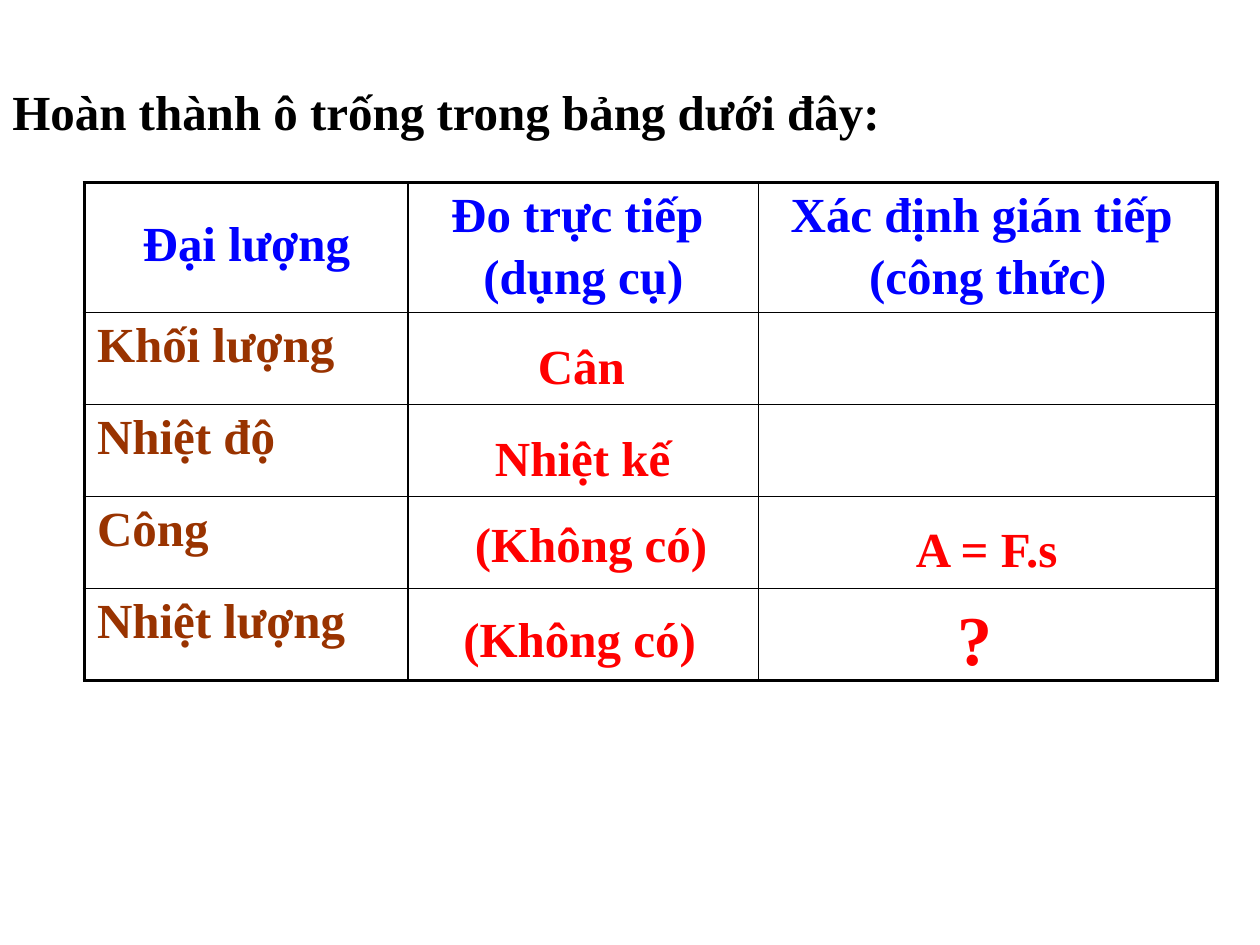
from lxml import etree
from pptx import Presentation
from pptx.dml.color import RGBColor
from pptx.enum import text as txt
from pptx.oxml.ns import qn
from pptx.util import Inches, Pt


def write(frame, words, size=28, color="FF0000", align=txt.PP_ALIGN.LEFT, gap=4.5):
    frame.word_wrap = True
    for i, line in enumerate(words.split("\n")):
        para = frame.paragraphs[0] if i == 0 else frame.add_paragraph()
        para.alignment = align
        if i:
            para.space_before = Pt(gap)
        run = para.add_run()
        run.text = line
        run.font.name = "Times New Roman"
        run.font.size = Pt(size)
        run.font.bold = True
        run.font.color.rgb = RGBColor.from_string(color)


def edge(cell, side, width):
    line = etree.SubElement(cell._tc.get_or_add_tcPr(), qn("a:" + side), w=str(Pt(width)))
    fill = etree.SubElement(line, qn("a:solidFill"))
    etree.SubElement(fill, qn("a:srgbClr"), val="000000")


prs = Presentation()
prs.slide_width, prs.slide_height = Inches(10), Inches(7.5)
slide = prs.slides.add_slide(prs.slide_layouts[6])

heads = ["Đại lượng", "Đo trực tiếp \n(dụng cụ)", "Xác định gián tiếp \n(công thức)"]
names = ["Khối lượng", "Nhiệt độ", "Công", "Nhiệt lượng"]
widths = [2.57, 2.78, 3.64]
heights = [1.03] + [0.73] * len(names)

grid = slide.shapes.add_table(
    len(heights), len(widths), Inches(0.67), Inches(1.45),
    Inches(sum(widths)), Inches(sum(heights))).table
grid.first_row = grid.horz_banding = False
for col, width in zip(grid.columns, widths):
    col.width = Inches(width)
for row, height in zip(grid.rows, heights):
    row.height = Inches(height)

for r in range(len(heights)):
    for c in range(len(widths)):
        cell = grid.cell(r, c)
        cell.margin_bottom = Inches(0.02)
        outer = {"lnL": c == 0, "lnR": c == len(widths) - 1,
                 "lnT": r == 0, "lnB": r == len(heights) - 1}
        for side, thick in outer.items():
            edge(cell, side, 2.25 if thick else 1)
        cell.fill.background()
        if r == 0:
            write(cell.text_frame, heads[c], color="0000FF", align=txt.PP_ALIGN.CENTER)
        elif c == 0:
            write(cell.text_frame, names[r - 1], color="993300")
        else:
            cell.text_frame.paragraphs[0].font.size = Pt(28)

first = grid.cell(0, 0)
first.vertical_anchor = txt.MSO_ANCHOR.MIDDLE
first.margin_bottom = Inches(0.1)

notes = [
    ("Hoàn thành ô trống trong bảng dưới đây:", 0, 0.6, 7.17, 0.57, 28, "000000"),
    ("Cân", 4.17, 2.61, 1.25, 0.57, 28, "FF0000"),
    ("Nhiệt kế", 3.83, 3.34, 2.42, 0.57, 28, "FF0000"),
    ("(Không có)", 3.67, 4.03, 2.17, 0.57, 28, "FF0000"),
    ("(Không có)", 3.58, 4.78, 2.17, 0.57, 28, "FF0000"),
    ("A = F.s", 7.17, 4.07, 2.17, 0.57, 28, "FF0000"),
    ("?", 7.5, 4.68, 0.83, 0.77, 40, "FF0000"),
]
for words, left, top, width, height, size, color in notes:
    box = slide.shapes.add_textbox(Inches(left), Inches(top), Inches(width), Inches(height))
    box.text_frame.auto_size = txt.MSO_AUTO_SIZE.SHAPE_TO_FIT_TEXT
    write(box.text_frame, words, size=size, color=color)

prs.save("out.pptx")
